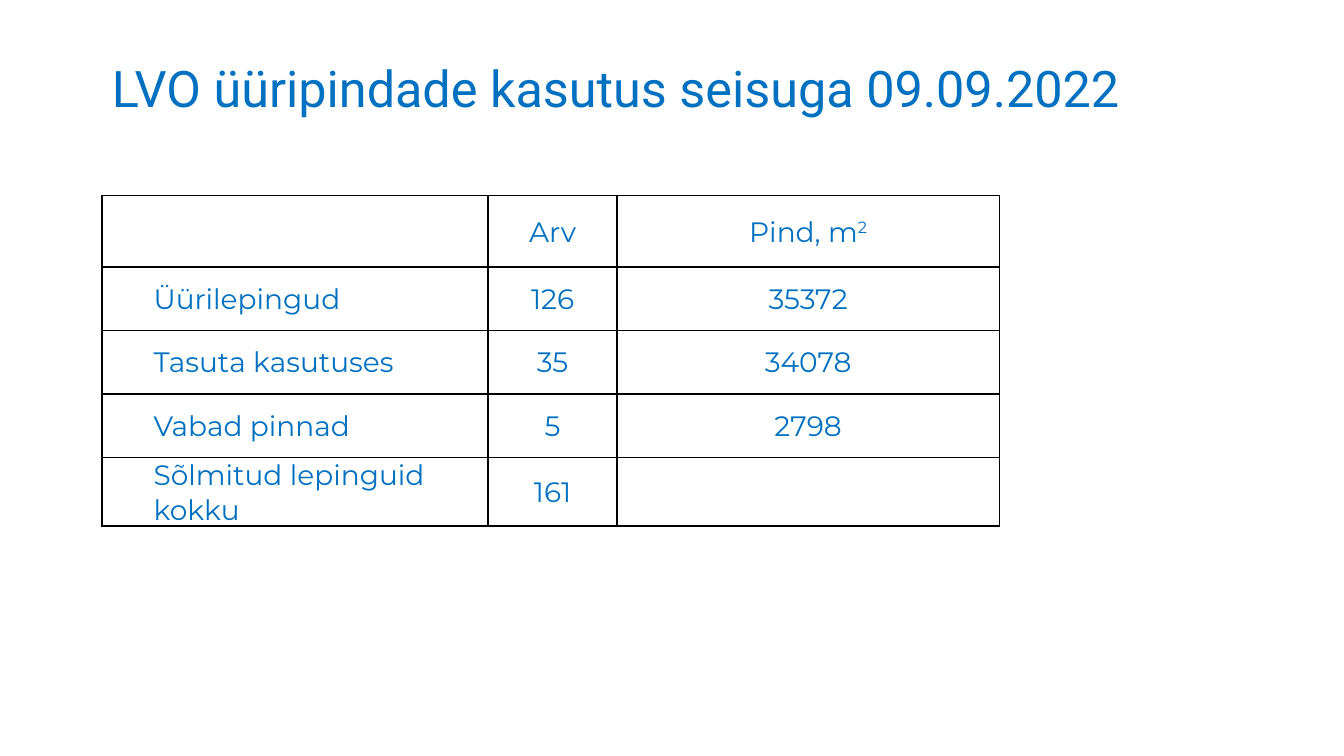
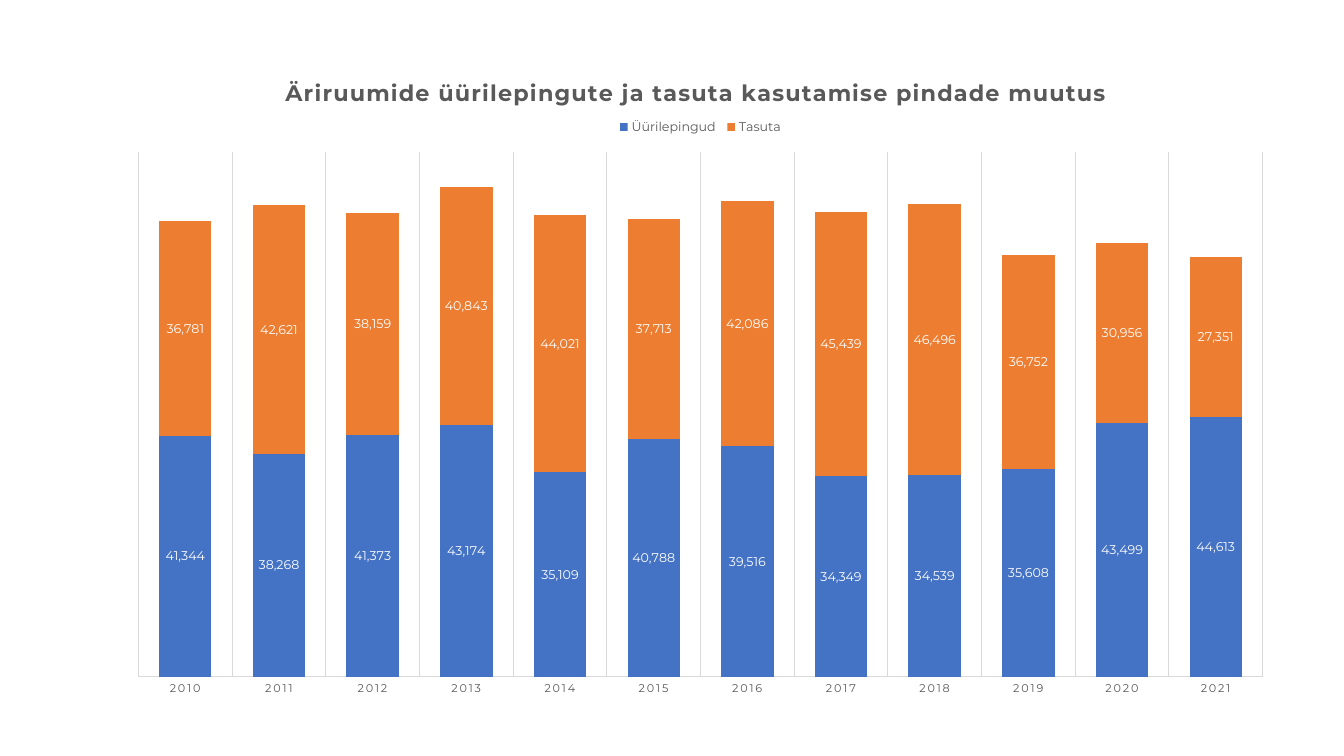
from dataclasses import dataclass

from lxml import etree
from pptx import Presentation
from pptx import util as u
from pptx.chart.data import CategoryChartData
from pptx.dml.color import RGBColor
from pptx.enum import chart as charts, text
from pptx.oxml import parse_xml
from pptx.oxml.ns import nsdecls, qn


@dataclass(frozen=True)
class Theme:
    """Colours, fonts and type sizes of the deck."""
    accent: str = "0070C0"
    paper: str = "FFFFFF"
    ink: str = "000000"
    grey: str = "595959"
    rule: str = "D9D9D9"
    series: tuple = ("4472C4", "ED7D31")
    title_font: str = "Roboto"
    body_font: str = "Montserrat"
    title_size: float = 36
    table_size: float = 20
    chart_title_size: float = 16
    chart_size: float = 10
    label_size: float = 9
    axis_size: float = 8
    rule_width: float = 0.75
    border_width: float = 1


class SlideBuilder:
    def __init__(self, theme):
        self.theme = theme
        self.deck = Presentation()
        self.deck.slide_width, self.deck.slide_height = u.Cm(33.87), u.Cm(19.05)
        self.slide = None

    def new_slide(self):
        self.slide = self.deck.slides.add_slide(self.deck.slide_layouts[6])

    # Shared styling
    def style(self, font, size, colour, name=None, bold=False):
        font.name = name or self.theme.body_font
        font.size = u.Pt(size)
        font.bold = bold
        font.color.rgb = RGBColor.from_string(colour)

    def span(self, para, words, size, colour, name=None, bold=False):
        span = para.add_run()
        span.text = words
        self.style(span.font, size, colour, name, bold)
        return span

    def line(self, line_format, colour):
        line_format.color.rgb = RGBColor.from_string(colour)
        line_format.width = u.Pt(self.theme.rule_width)

    # Title
    def title(self, words, left, top, width, height):
        box = self.slide.shapes.add_textbox(*map(u.Cm, (left, top, width, height)))
        box.text_frame.word_wrap = True
        self.span(box.text_frame.paragraphs[0], words, self.theme.title_size,
                  self.theme.accent, self.theme.title_font)

    # Table
    def borders(self, cell):
        properties = cell._tc.get_or_add_tcPr()
        for side in ("lnL", "lnR", "lnT", "lnB"):
            properties.append(parse_xml(
                f'<a:{side} {nsdecls("a")} w="{u.Pt(self.theme.border_width)}">'
                f'<a:solidFill><a:srgbClr val="{self.theme.ink}"/></a:solidFill></a:{side}>'))

    def cell(self, cell, words, indent):
        self.borders(cell)
        cell.fill.solid()
        cell.fill.fore_color.rgb = RGBColor.from_string(self.theme.paper)
        cell.margin_left = cell.margin_right = cell.margin_top = u.Cm(0.03)
        cell.margin_bottom = 0
        cell.vertical_anchor = text.MSO_ANCHOR.MIDDLE
        para = cell.text_frame.paragraphs[0]
        if indent:
            para._p.get_or_add_pPr().set("marL", str(u.Cm(indent)))
        else:
            para.alignment = text.PP_ALIGN.CENTER
        # A caret starts a superscript
        for index, part in enumerate(words.split("^") if words else ()):
            span = self.span(para, part, self.theme.table_size, self.theme.accent)
            if index:
                span.font._element.set("baseline", "30000")

    def table(self, rows, left, top, widths, heights):
        frame = self.slide.shapes.add_table(
            len(rows), len(widths), u.Cm(left), u.Cm(top),
            u.Cm(sum(widths)), u.Cm(sum(heights)))
        table = frame.table
        table.first_row = table.horz_banding = False
        for column, width in zip(table.columns, widths):
            column.width = u.Cm(width)
        for r, (row, height) in enumerate(zip(rows, heights)):
            table.rows[r].height = u.Cm(height)
            for c, words in enumerate(row):
                self.cell(table.cell(r, c), words, 0 if c else 1.27)

    # Chart
    def place(self, element, successor, inner=False, **fractions):
        """Fix a chart part at fractions of the chart's size."""
        for old in element.findall(qn("c:layout")):
            element.remove(old)
        layout = etree.Element(qn("c:layout"))
        manual = etree.SubElement(layout, qn("c:manualLayout"))
        settings = [("layoutTarget", "inner")] if inner else []
        settings += [("xMode", "edge"), ("yMode", "edge"), *fractions.items()]
        for name, value in settings:
            etree.SubElement(manual, qn(f"c:{name}")).set("val", str(value))
        element.find(qn(successor)).addprevious(layout)

    def stacked_columns(self, title, categories, series, maximum, left, top, width, height):
        theme = self.theme
        data = CategoryChartData(number_format="#,##0")
        data.categories = categories
        for name, values in series.items():
            data.add_series(name, values)
        chart = self.slide.shapes.add_chart(
            charts.XL_CHART_TYPE.COLUMN_STACKED,
            *map(u.Cm, (left, top, width, height)), data).chart
        self.style(chart.font, theme.chart_size, theme.ink)

        # Title and legend
        chart.has_title = True
        para = chart.chart_title.text_frame.paragraphs[0]
        span = self.span(para, title, theme.chart_title_size, theme.grey, bold=True)
        span.font._element.set("spc", "100")
        chart.has_legend = True
        chart.legend.position = charts.XL_LEGEND_POSITION.TOP
        chart.legend.include_in_layout = False
        self.style(chart.legend.font, theme.label_size, theme.grey)

        # Axes
        years, amounts = chart.category_axis, chart.value_axis
        years.major_tick_mark = years.minor_tick_mark = charts.XL_TICK_MARK.NONE
        years.has_major_gridlines = True
        self.line(years.major_gridlines.format.line, theme.rule)
        self.line(years.format.line, theme.rule)
        self.style(years.tick_labels.font, theme.axis_size, theme.grey)
        for font in chart.element.xpath(".//c:catAx/c:txPr//a:defRPr"):
            font.set("spc", "120")
        amounts.minimum_scale, amounts.maximum_scale = 0, maximum
        amounts.has_major_gridlines = False
        amounts.visible = False

        # Columns and their labels
        plot = chart.plots[0]
        plot.gap_width, plot.overlap = 79, 100
        plot.vary_by_categories = False
        for columns, colour in zip(plot.series, theme.series):
            columns.format.fill.solid()
            columns.format.fill.fore_color.rgb = RGBColor.from_string(colour)
            labels = columns.data_labels
            labels.show_value = True
            labels.position = charts.XL_LABEL_POSITION.CENTER
            labels.number_format = "#,##0"
            labels.number_format_is_linked = False
            self.style(labels.font, theme.label_size, theme.paper)

        # Places inside the chart
        area = chart.element.xpath(".//c:plotArea")[0]
        self.place(area, "c:barChart", inner=True, x=0.02, y=0.156, w=0.96, h=0.796)
        self.place(chart.chart_title._element, "c:overlay", x=0.142, y=0.037)
        self.place(chart.legend._element, "c:overlay", x=0.425, y=0.1, w=0.15, h=0.036)


def main():
    builder = SlideBuilder(Theme())

    # Use of rented premises
    builder.new_slide()
    builder.title("LVO üüripindade kasutus seisuga 09.09.2022", 2.57, 1.32, 29.2, 2.6)
    builder.table(
        [("", "Arv", "Pind, m^2"),
         ("Üürilepingud", "126", "35372"),
         ("Tasuta kasutuses", "35", "34078"),
         ("Vabad pinnad", "5", "2798"),
         ("Sõlmitud lepinguid kokku", "161", "")],
        2.57, 4.93, widths=(9.73, 3.25, 9.63), heights=(1.8, *[1.6] * 4))

    # Change in leased and free area
    builder.new_slide()
    builder.stacked_columns(
        "Äriruumide üürilepingute ja tasuta kasutamise pindade muutus",
        [str(year) for year in range(2010, 2022)],
        {"Üürilepingud": (41344, 38268, 41373, 43174, 35109, 40788,
                          39516, 34349, 34539, 35608, 43499, 44613),
         "Tasuta": (36781, 42621, 38159, 40843, 44021, 37713,
                    42086, 45439, 46496, 36752, 30956, 27351)},
        90000, 2.9, 1.24, 29.51, 16.61)

    builder.deck.save("out.pptx")


if __name__ == "__main__":
    main()
